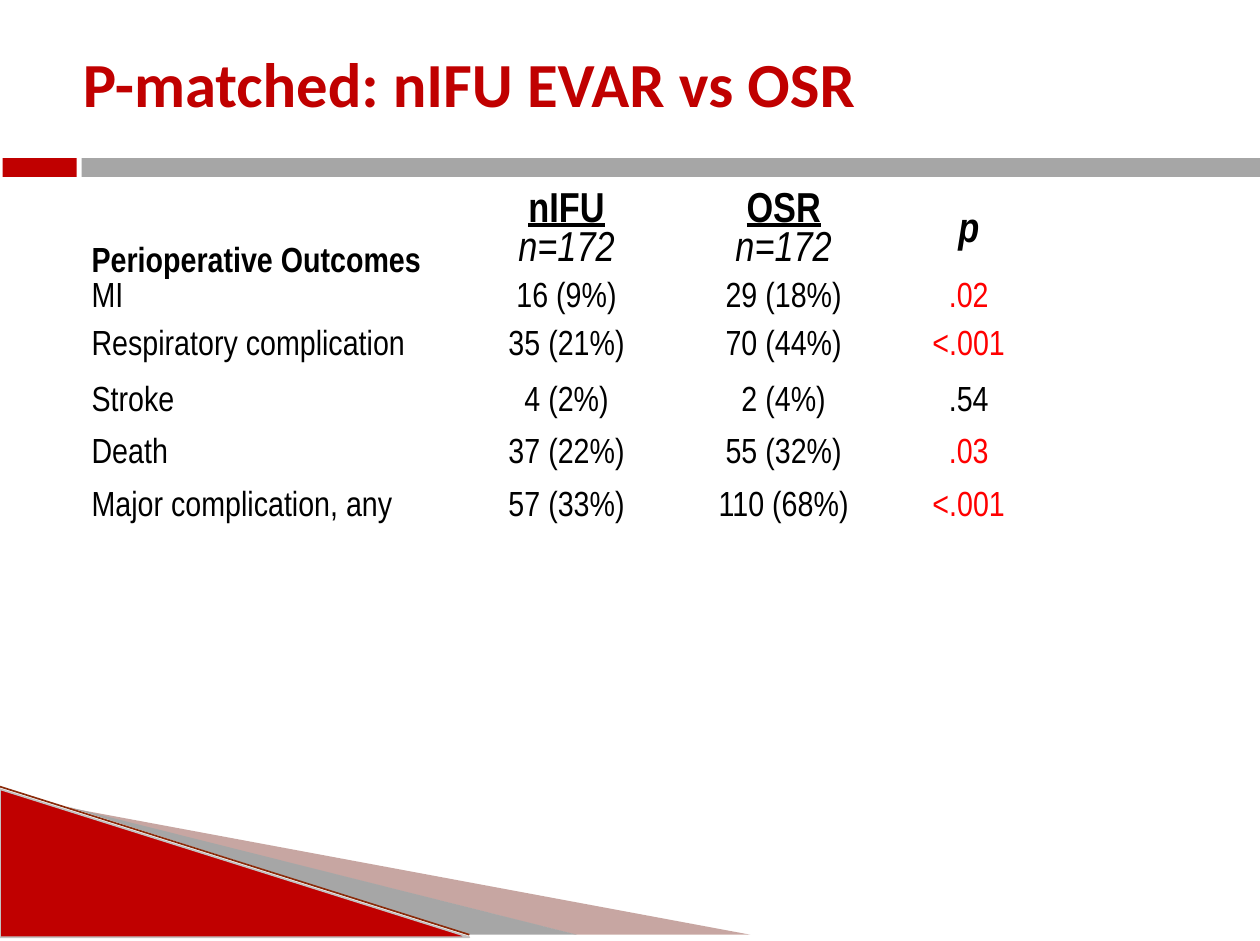
"""Build the slide on perioperative outcomes of matched nIFU EVAR and OSR groups."""
from dataclasses import dataclass

from lxml.etree import SubElement
from pptx import Presentation
from pptx.dml.color import RGBColor as RGB
from pptx.enum.shapes import MSO_CONNECTOR as Link, MSO_SHAPE as Kind
from pptx.enum.text import MSO_ANCHOR as Anchor, PP_ALIGN as Align
from pptx.oxml.ns import qn
from pptx.util import Inches, Pt

TITLE = "P-matched: nIFU EVAR vs OSR"
HEADS = ["Perioperative Outcomes", "nIFU\nn=172", "OSR\nn=172", "p"]
ROWS = [
    ("MI", "16 (9%)", "29 (18%)", ".02"),
    ("Respiratory complication", "35 (21%)", "70 (44%)", "<.001"),
    ("Stroke", "4 (2%)", "2 (4%)", ".54"),
    ("Death", "37 (22%)", "55 (32%)", ".03"),
    ("Major complication, any", "57 (33%)", "110 (68%)", "<.001"),
]
WIDTHS = [2.76, 2.05, 1.41, 1.54]
HEIGHTS = [0.77, 0.3, 0.47, 0.42, 0.41, 0.43]
WIDE, HIGH = 10.04, 7.5
SPLIT = 0.65


@dataclass(frozen=True)
class Theme:
    """Colours, fonts and type sizes."""
    red: str = "C00000"
    grey: str = "A6A6A6"
    rose: str = "742217"
    edge: str = "C3C1C1"
    rust: str = "8A2A0A"
    ink: str = "000000"
    alert: str = "FF0000"
    head: str = "Calibri"
    body: str = "Arial Narrow"
    title: int = 36
    label: int = 24
    cell: int = 20


LOOK = Theme()
WEDGES = [
    ([(0.56, 6.44), (5.98, 7.45), (4.59, 7.45)], LOOK.rose, 40),
    ([(0.54, 6.43), (4.6, 7.45), (3.74, 7.45)], LOOK.grey, 100),
]
SHAPES = [
    (Kind.RIGHT_TRIANGLE, (0, 6.29, 3.74, 1.18), LOOK.red, LOOK.edge),
    (Kind.RECTANGLE, (0.02, 1.26, 0.59, 0.15), LOOK.red, None),
    (Kind.RECTANGLE, (SPLIT, 1.26, WIDE - SPLIT, 0.15), LOOK.grey, None),
]


def tint(font, name, size, color, bold=False):
    """Set the face, size, colour and weight of a font."""
    font.name, font.size, font.bold = name, Pt(size), bold
    font.color.rgb = RGB.from_string(color)


def paint(shape, fill, line=None):
    """Give a shape a flat fill and an optional thin line."""
    shape.shadow.inherit = False
    shape.fill.solid()
    shape.fill.fore_color.rgb = RGB.from_string(fill)
    if line:
        shape.line.color.rgb = RGB.from_string(line)
        shape.line.width = Pt(1)
    else:
        shape.line.fill.background()


def add_wedge(slide, points, fill, alpha):
    """Draw one filled wedge of the corner."""
    spots = [(Inches(x), Inches(y)) for x, y in points]
    pen = slide.shapes.build_freeform(*spots[0])
    pen.add_line_segments(spots[1:])
    wedge = pen.convert_to_shape()
    paint(wedge, fill)
    if alpha < 100:
        tone = wedge._element.spPr.find(".//" + qn("a:srgbClr"))
        SubElement(tone, qn("a:alpha"), val=str(alpha * 1000))


def add_decor(slide):
    """Draw the corner wedges and the bars below the title."""
    for wedge in WEDGES:
        add_wedge(slide, *wedge)
    for kind, box, fill, line in SHAPES:
        paint(slide.shapes.add_shape(kind, *map(Inches, box)), fill, line)
    ends = map(Inches, (0, 6.27, 3.74, 7.45))
    rim = slide.shapes.add_connector(Link.STRAIGHT, *ends)
    rim.line.color.rgb = RGB.from_string(LOOK.rust)
    rim.line.width = Pt(0.95)
    SubElement(rim._element.spPr, qn("a:effectLst"))


def add_title(slide):
    """Place and format the title."""
    title = slide.shapes.title
    title.left, title.top = Inches(0.36), Inches(0.21)
    title.width, title.height = Inches(7), Inches(0.89)
    frame = title.text_frame
    frame.text = TITLE
    frame.margin_left = Inches(0.3)
    frame.vertical_anchor = Anchor.MIDDLE
    para = frame.paragraphs[0]
    para.alignment = Align.LEFT
    tint(para.runs[0].font, LOOK.head, LOOK.title, LOOK.red, True)


def fill_cell(cell, text, row, col):
    """Write one table cell and format it by its place."""
    cell.fill.background()
    cell.margin_left = cell.margin_right = 0
    cell.margin_top = cell.margin_bottom = 0
    top, side = row == 0, col == 0
    cell.vertical_anchor = Anchor.BOTTOM if top and side else Anchor.MIDDLE
    cell.text_frame.text = text
    last = col == len(HEADS) - 1
    hit = last and not top and float(text.lstrip("<")) < 0.05
    size = LOOK.label if top and not side else LOOK.cell
    for rank, para in enumerate(cell.text_frame.paragraphs):
        para.alignment = Align.LEFT if side else Align.CENTER
        font = para.runs[0].font
        color = LOOK.alert if hit else LOOK.ink
        tint(font, LOOK.body, size, color, top and rank == 0)
        font.italic = top and (last or rank == 1)
        font.underline = top and rank == 0 and not (side or last)


def add_grid(slide):
    """Add the table of outcomes."""
    data = [HEADS, *ROWS]
    box = map(Inches, (0.73, 1.46, sum(WIDTHS), sum(HEIGHTS)))
    grid = slide.shapes.add_table(len(data), len(HEADS), *box).table
    grid.first_row = grid.horz_banding = False
    for col, width in zip(grid.columns, WIDTHS):
        col.width = Inches(width)
    for row, height in zip(grid.rows, HEIGHTS):
        row.height = Inches(height)
    for r, texts in enumerate(data):
        for c, text in enumerate(texts):
            fill_cell(grid.cell(r, c), text, r, c)


def main():
    """Build and save the slide."""
    deck = Presentation()
    deck.slide_width, deck.slide_height = Inches(WIDE), Inches(HIGH)
    slide = deck.slides.add_slide(deck.slide_layouts[5])
    add_decor(slide)
    add_title(slide)
    add_grid(slide)
    deck.save("out.pptx")


if __name__ == "__main__":
    main()
